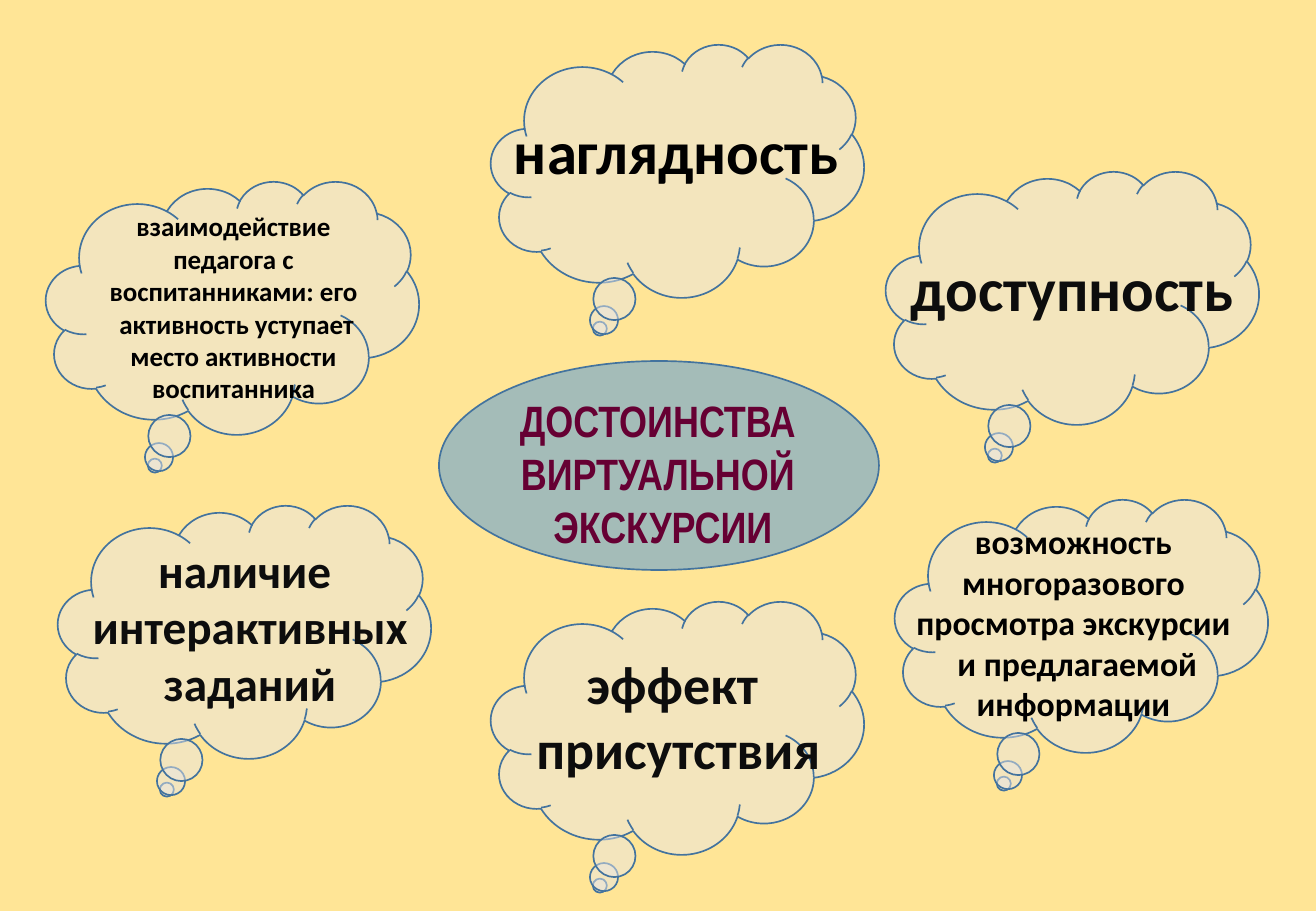
import pptx
import pptx.util
import pptx.dml.color
import pptx.enum.shapes
import pptx.enum.text
import pptx.oxml.ns
import lxml.etree

PX = 7526  # EMU per px
COLORS = {"background": "FFE596", "cloud": "E7E6E6", "oval": "5B9BD5",
          "line": "43739E", "title": "660033", "black": "000000", "dark": "0D0D0D"}
SHAPE = pptx.enum.shapes.MSO_SHAPE
ALIGN = pptx.enum.text.PP_ALIGN


def rgb(name):
    return pptx.dml.color.RGBColor.from_string(COLORS[name])


def add_bubble(kind, box, color, opacity):
    s = slide.shapes.add_shape(kind, *[v * PX for v in box])
    s.shadow.inherit = False
    s.fill.solid()
    s.fill.fore_color.rgb = rgb(color)
    clr = s.fill._xPr.find(".//" + pptx.oxml.ns.qn("a:srgbClr"))
    lxml.etree.SubElement(clr, pptx.oxml.ns.qn("a:alpha"), val=str(opacity * 1000))
    s.line.color.rgb = rgb("line")
    s.line.width = pptx.util.Pt(1)
    return s


prs = pptx.Presentation()
prs.slide_width, prs.slide_height = 1316 * PX, 911 * PX
slide = prs.slides.add_slide(prs.slide_layouts[6])
slide.background.fill.solid()
slide.background.fill.fore_color.rgb = rgb("background")

# Thought clouds
for x, y in [(886, 171), (58, 505), (895, 499), (491, 44), (46, 181), (491, 601)]:
    s = add_bubble(SHAPE.CLOUD_CALLOUT, (x, y, 373, 253), "cloud", 49)
    s.adjustments[0], s.adjustments[1] = -0.208, 0.625

# Central oval
add_bubble(SHAPE.OVAL, (439, 361, 440, 209), "oval", 55)

# Labels: box, lines, size, font, colour, alignment, wrap
labels = [
    ((505, 388, 306, 170), ["ДОСТОИНСТВА ", "ВИРТУАЛЬНОЙ", " ЭКСКУРСИИ"],
     26, "Arial Narrow", "title", ALIGN.CENTER, False),
    ((83, 204, 301, 207),
     ["взаимодействие педагога с воспитанниками: его",
      " активность уступает место активности воспитанника"],
     16, "Calibri", "black", ALIGN.CENTER, True),
    ((903, 515, 341, 234),
     ["возможность многоразового просмотра экскурсии", " и предлагаемой информации"],
     20, "Calibri", "black", ALIGN.CENTER, True),
    ((502, 108, 351, 85), ["наглядность"], 36, "Calibri", "black", ALIGN.LEFT, False),
    ((899, 245, 347, 85), ["доступность"], 36, "Calibri", "dark", ALIGN.LEFT, False),
    ((524, 645, 309, 142), ["эффект ", "присутствия"],
     32, "Calibri", "dark", ALIGN.CENTER, False),
    ((80, 535, 340, 182), ["наличие ", "интерактивных ", "заданий"],
     28, "Calibri", "dark", ALIGN.CENTER, False),
]
for box, lines, size, font, color, align, wrap in labels:
    tf = slide.shapes.add_textbox(*[v * PX for v in box]).text_frame
    tf.word_wrap = wrap
    tf.auto_size = pptx.enum.text.MSO_AUTO_SIZE.SHAPE_TO_FIT_TEXT
    for i, line in enumerate(lines):
        p = tf.add_paragraph() if i else tf.paragraphs[0]
        p.alignment = align
        r = p.add_run()
        r.text = line
        for name, value in {"size": pptx.util.Pt(size), "name": font, "bold": True}.items():
            setattr(r.font, name, value)
        r.font.color.rgb = rgb(color)

prs.save("out.pptx")
